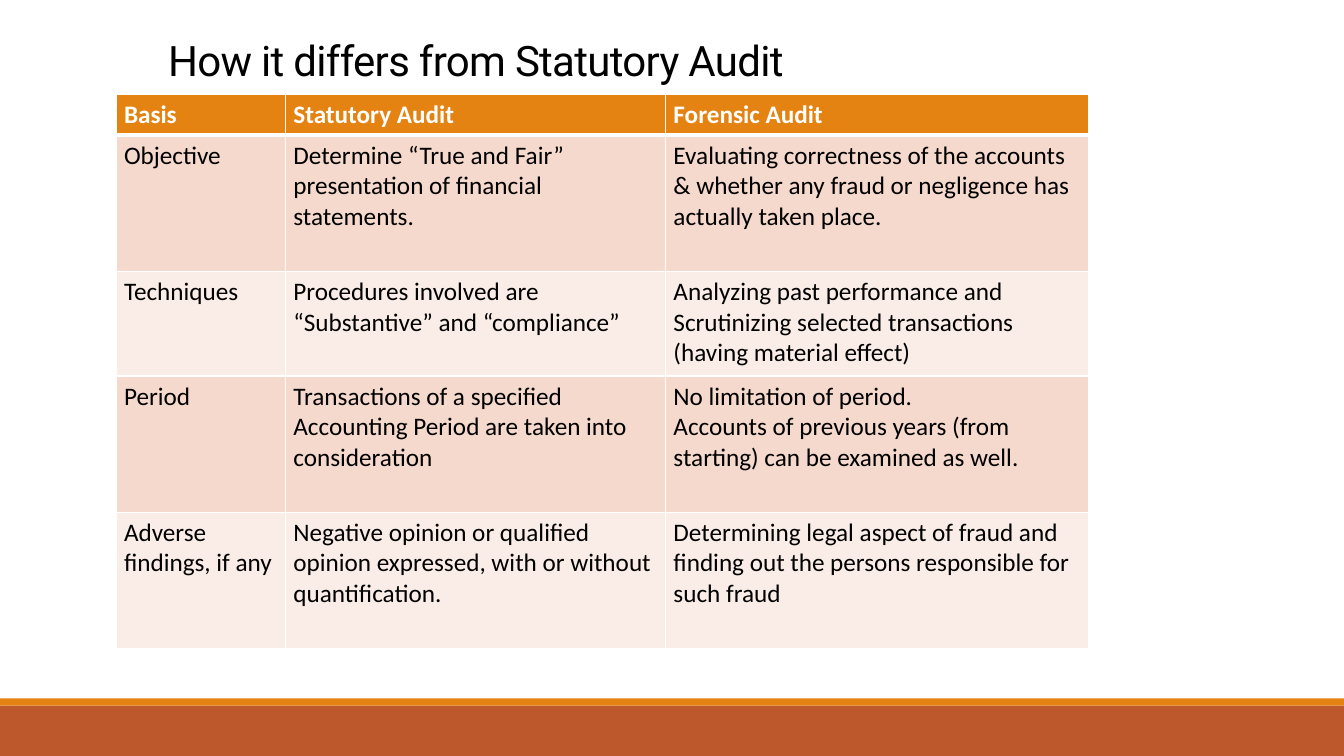
from pptx import Presentation
from pptx import util as u
from pptx.dml.color import RGBColor
from pptx.enum import shapes, text
from pptx.oxml import parse_xml
from pptx.oxml.ns import nsdecls

PX = 9144  # 100 px to the inch
W, H = 1333, 750
THEME = dict(
    rust="BD582C", orange="E48312", bands=("F5D9CC", "FAEDE7"),
    white="FFFFFF", black="000000",
    title_font="Roboto", body_font="Calibri", title_size=30, body_size=18,
)
COLUMNS = (168, 377, 420)
ROWS = (38, 135, 104, 135, 135)
COMPARISON = (
    ("Basis", "Statutory Audit", "Forensic Audit"),
    ("Objective",
     "Determine “True and Fair” presentation of financial statements.",
     "Evaluating correctness of the accounts & whether any fraud or negligence "
     "has actually taken place."),
    ("Techniques",
     "Procedures involved are “Substantive” and “compliance”",
     "Analyzing past performance and\n"
     "Scrutinizing selected transactions (having material effect)"),
    ("Period",
     "Transactions of a specified Accounting Period are taken into consideration",
     "No limitation of period.\n"
     "Accounts of previous years (from starting) can be examined as well."),
    ("Adverse findings, if any",
     "Negative opinion or qualified opinion expressed, with or without quantification.",
     "Determining legal aspect of fraud and finding out the persons responsible "
     "for such fraud"),
)


def emu(*lengths):
    return [u.Emu(n * PX) for n in lengths]


def set_attrs(obj, **values):
    for name, value in values.items():
        setattr(obj, name, value)


def style_font(font, name, size, color, bold=False):
    set_attrs(font, name=name, size=u.Pt(size), bold=bold)
    font.color.rgb = RGBColor.from_string(color)


def add_footer(s, x, y, w, h):
    stripe = 7
    for top, height, color in ((y + stripe, h - stripe, THEME["rust"]),
                               (y, stripe, THEME["orange"])):
        sp = s.shapes.add_shape(shapes.MSO_SHAPE.RECTANGLE, *emu(x, top, w, height))
        sp.shadow.inherit = False
        sp.fill.solid()
        sp.fill.fore_color.rgb = RGBColor.from_string(color)
        sp.line.fill.background()


def add_title(s, x, y, w, h, wording):
    tf = s.shapes.add_textbox(*emu(x, y, w, h)).text_frame
    set_attrs(tf, word_wrap=True, vertical_anchor=text.MSO_ANCHOR.BOTTOM)
    p = tf.paragraphs[0]
    p.line_spacing = 0.85
    r = p.add_run()
    r.text = wording
    style_font(r.font, THEME["title_font"], THEME["title_size"], THEME["black"])
    r.font._element.set("spc", "-50")


def set_borders(cell, **widths):
    tc_pr = cell._tc.get_or_add_tcPr()
    for i, (side, width) in enumerate(widths.items()):
        tc_pr.insert(i, parse_xml(
            f'<a:ln{side} {nsdecls("a")} w="{u.Pt(width)}"><a:solidFill>'
            f'<a:srgbClr val="{THEME["white"]}"/></a:solidFill></a:ln{side}>'))


def fill_cell(cell, wording, row):
    header = row == 0
    cell.text = wording
    set_attrs(cell, **dict(zip(
        ("margin_left", "margin_top", "margin_right", "margin_bottom"),
        emu(8, 5, 8, 5))))
    cell.fill.solid()
    color = THEME["orange"] if header else THEME["bands"][(row - 1) % 2]
    cell.fill.fore_color.rgb = RGBColor.from_string(color)
    set_borders(cell, L=1, R=1, T=3 if row == 1 else 1, B=3 if header else 1)
    for p in cell.text_frame.paragraphs:
        for r in p.runs:
            style_font(r.font, THEME["body_font"], THEME["body_size"],
                       THEME["white"] if header else THEME["black"], header)


def add_comparison(s, x, y):
    table = s.shapes.add_table(len(ROWS), len(COLUMNS),
                               *emu(x, y, sum(COLUMNS), sum(ROWS))).table
    table.horz_banding = False
    for column, width in zip(table.columns, emu(*COLUMNS)):
        column.width = width
    for row, height in zip(table.rows, emu(*ROWS)):
        row.height = height
    for i, wordings in enumerate(COMPARISON):
        for j, wording in enumerate(wordings):
            fill_cell(table.cell(i, j), wording, i)


def main():
    prs = Presentation()
    prs.slide_width, prs.slide_height = emu(W, H)
    s = prs.slides.add_slide(prs.slide_layouts[6])
    # Footer bands
    add_footer(s, 0, 693, W, H - 693)
    # Title
    add_title(s, 157, 12, 958, 77, "How it differs from Statutory Audit")
    # Comparison table
    add_comparison(s, 115, 94)
    prs.save("out.pptx")


if __name__ == "__main__":
    main()
